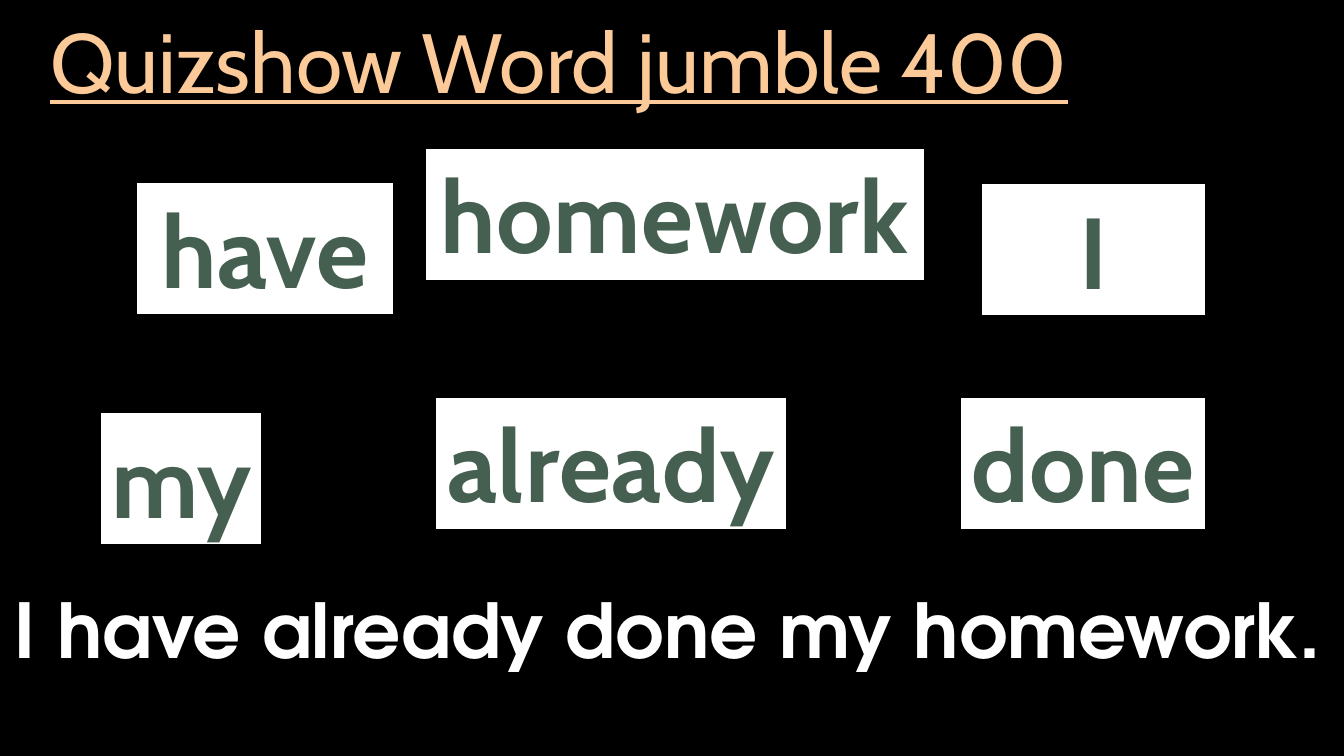
from dataclasses import dataclass

from pptx import Presentation
from pptx.dml.color import RGBColor
from pptx.enum.shapes import MSO_SHAPE
from pptx.enum.text import MSO_ANCHOR, MSO_AUTO_SIZE, PP_ALIGN
from pptx.shapes.autoshape import Shape
from pptx.slide import Slide
from pptx.text.text import _Paragraph as Paragraph
from pptx.util import Pt

COLORS = {
    "black": "000000",
    "white": "FFFFFF",
    "peach": "FBCA98",
    "green": "455F51",
}
CARD_HEIGHT = 94.5


@dataclass
class WordCard:
    word: str
    left: float
    top: float
    width: float
    wrap: bool = False


CARDS = [
    WordCard("my", 72, 294.5, 115.2),
    WordCard("homework", 303.8, 105.8, 356.4),
    WordCard("I", 700.6, 131, 160.6, wrap=True),
    WordCard("done", 686.2, 283.7, 175),
    WordCard("have", 97.2, 130.3, 184.3, wrap=True),
    WordCard("already", 311, 283.7, 251.3),
]


def color(name: str) -> RGBColor:
    return RGBColor.from_string(COLORS[name])


def write(box: Shape, text: str, size: float, font: str, ink: str) -> Paragraph:
    para = box.text_frame.paragraphs[0]
    para.text = text
    para.font.size = Pt(size)
    para.font.name = font
    para.font.color.rgb = color(ink)
    return para


def add_title(page: Slide) -> None:
    box = page.shapes.add_textbox(Pt(28.8), Pt(11.5), Pt(820), Pt(71.3))
    box.text_frame.word_wrap = True
    box.text_frame.vertical_anchor = MSO_ANCHOR.MIDDLE
    para = write(box, "Quizshow Word jumble 400", 60, "Cabin", "peach")
    para.line_spacing = 0.9
    para.font.underline = True


def add_card(page: Slide, card: WordCard) -> None:
    box = page.shapes.add_shape(
        MSO_SHAPE.RECTANGLE,
        Pt(card.left), Pt(card.top), Pt(card.width), Pt(CARD_HEIGHT),
    )
    box.shadow.inherit = False
    box.fill.solid()
    box.fill.fore_color.rgb = color("white")
    box.line.color.rgb = color("black")
    box.line.width = Pt(1)
    box.text_frame.word_wrap = card.wrap
    box.text_frame.auto_size = MSO_AUTO_SIZE.SHAPE_TO_FIT_TEXT
    box.text_frame.vertical_anchor = MSO_ANCHOR.TOP
    para = write(box, card.word, 72, "Cabin", "green")
    para.alignment = PP_ALIGN.CENTER
    para.font.bold = True
    # Letter spacing of half a point
    para.font._element.set("spc", "50")


def add_answer(page: Slide) -> None:
    box = page.shapes.add_textbox(Pt(-5), Pt(412.6), Pt(964), Pt(72.7))
    box.text_frame.word_wrap = False
    box.text_frame.auto_size = MSO_AUTO_SIZE.SHAPE_TO_FIT_TEXT
    para = write(
        box, "I have already done my homework.", 54, "TeX Gyre Adventor", "white"
    )
    para.alignment = PP_ALIGN.CENTER
    para.font.bold = True


def main() -> None:
    deck = Presentation()
    deck.slide_width, deck.slide_height = Pt(960), Pt(540)
    page = deck.slides.add_slide(deck.slide_layouts[6])
    page.background.fill.solid()
    page.background.fill.fore_color.rgb = color("black")

    # Title, jumbled words, then the solved sentence
    add_title(page)
    for card in CARDS:
        add_card(page, card)
    add_answer(page)

    deck.save("out.pptx")


if __name__ == "__main__":
    main()
